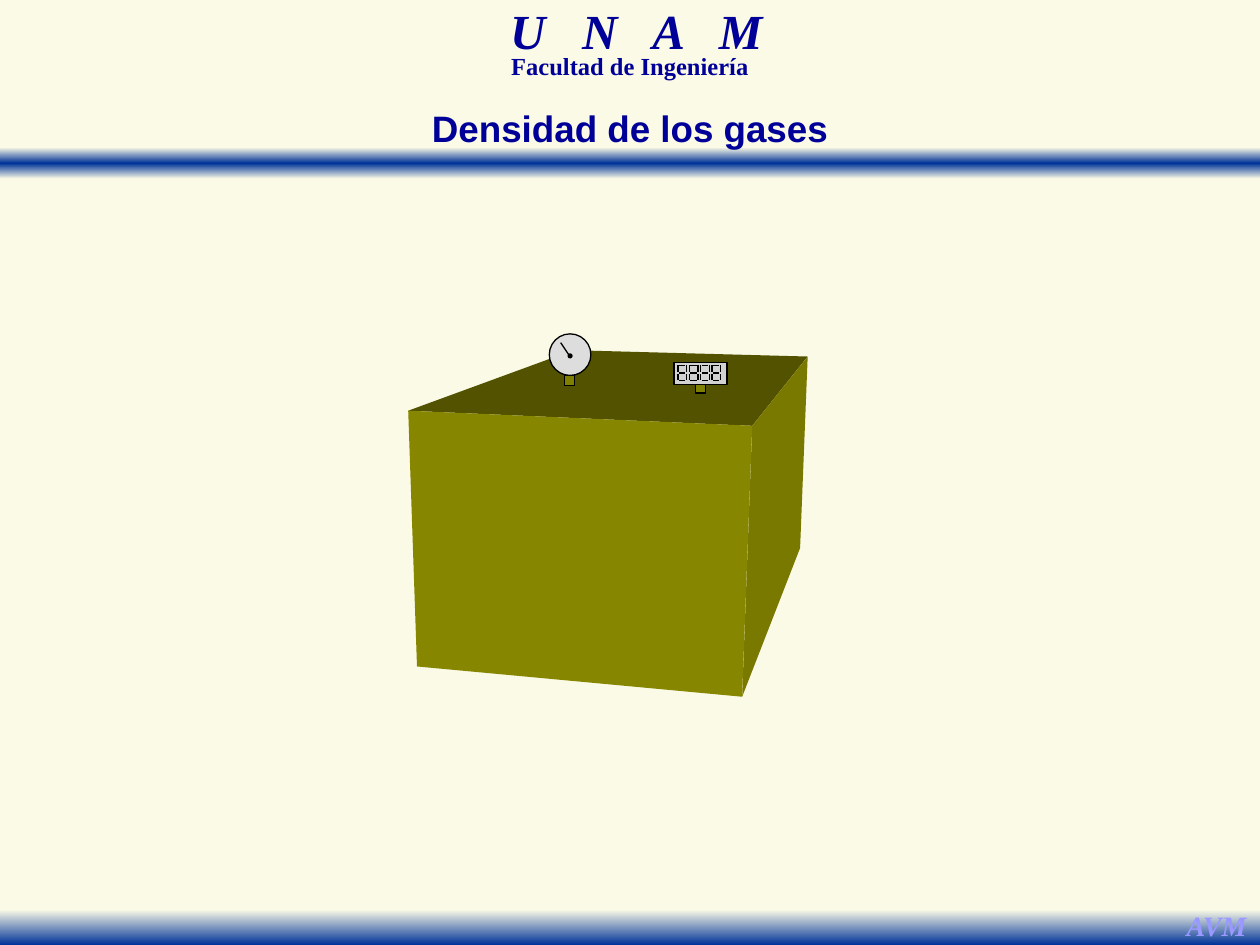
from lxml.etree import SubElement
from pptx import Presentation
from pptx.dml.color import RGBColor
from pptx.enum.shapes import MSO_CONNECTOR as Line, MSO_SHAPE as Shape
from pptx.enum.text import MSO_ANCHOR as Anchor, PP_ALIGN as Align
from pptx.oxml.ns import qn
from pptx.util import Inches, Pt

CREAM = RGBColor(0xFA, 0xFA, 0xE6)
BLUE = RGBColor(0x00, 0x33, 0x99)
NAVY = RGBColor(0x00, 0x00, 0x99)
LILAC = RGBColor(0x99, 0x99, 0xFF)
BLACK = RGBColor(0x00, 0x00, 0x00)
OLIVE = RGBColor(0x80, 0x80, 0x00)
OLIVE_FRONT = RGBColor(0x86, 0x86, 0x00)
OLIVE_SIDE = RGBColor(0x79, 0x79, 0x00)
OLIVE_TOP = RGBColor(0x52, 0x52, 0x00)
DIAL_GRAY = RGBColor(0xDD, 0xDD, 0xDD)
SCREEN_GRAY = RGBColor(0xD2, 0xD2, 0xD2)

# Content: left, top, width, height in inches
BANDS = [
    ((0, 1.17, 10, 0.25), [(0, CREAM), (50, BLUE), (100, CREAM)]),
    ((0, 7.22, 10, 0.28), [(0, CREAM), (100, BLUE)]),
]
# text, place, line spacing, letter spacing in points, wrap, font
TEXTS = [
    ("U N A M", (3.09, 0.08, 3.92, 0.43), 0.7, 7, True,
     dict(name="Times New Roman", size=Pt(28), bold=True, italic=True, color=NAVY)),
    ("Facultad de Ingeniería", (3.21, 0.42, 3.58, 0.26), 0.7, 0, True,
     dict(name="Times New Roman", size=Pt(14), bold=True, color=NAVY)),
    ("AVM", (9.31, 7.16, 0.69, 0.37), 1, 0, False,
     dict(name="Times New Roman", size=Pt(16), bold=True, italic=True, color=LILAC)),
    ("Densidad de los gases", (3.31, 0.79, 3.38, 0.45), 1, 0, False,
     dict(name="Arial", size=Pt(21), bold=True, color=NAVY)),
]

# Tank corners, seen in perspective
FRONT_TOP_LEFT, FRONT_TOP_RIGHT = (3.24, 3.26), (5.97, 3.38)
FRONT_LOW_LEFT, FRONT_LOW_RIGHT = (3.31, 5.29), (5.89, 5.53)
BACK_TOP_LEFT, BACK_TOP_RIGHT = (4.55, 2.78), (6.41, 2.83)
BACK_LOW_RIGHT = (6.35, 4.35)
TANK_FACES = [
    (OLIVE_TOP, [FRONT_TOP_LEFT, BACK_TOP_LEFT, BACK_TOP_RIGHT, FRONT_TOP_RIGHT]),
    (OLIVE_SIDE, [FRONT_TOP_RIGHT, BACK_TOP_RIGHT, BACK_LOW_RIGHT, FRONT_LOW_RIGHT]),
    (OLIVE_FRONT, [FRONT_TOP_LEFT, FRONT_TOP_RIGHT, FRONT_LOW_RIGHT, FRONT_LOW_LEFT]),
]

GAUGE_BODY = [
    (Shape.RECTANGLE, (4.48, 2.98, 0.08, 0.08), OLIVE),
    (Shape.OVAL, (4.36, 2.65, 0.33, 0.33), DIAL_GRAY),
]
NEEDLE = (4.53, 2.84, 4.45, 2.72)
PIVOT = (Shape.OVAL, (4.51, 2.81, 0.03, 0.03), BLACK)
THERMOMETER_BODY = [
    (Shape.RECTANGLE, (5.52, 3.04, 0.08, 0.08), OLIVE),
    (Shape.RECTANGLE, (5.35, 2.88, 0.42, 0.17), SCREEN_GRAY),
]
# Seven segments of one digit, measured from its top left corner
SEGMENTS = [(x, y, x, y + 0.05) for x in (0, 0.07) for y in (0, 0.07)]
SEGMENTS += [(0.01, y, 0.06, y) for y in (0, 0.06, 0.12)]
DIGIT_COUNT, DIGIT_LEFT, DIGIT_TOP, DIGIT_STEP = 4, 5.38, 2.9, 0.09


def inches(values):
    return [Inches(value) for value in values]


def add_part(shapes, kind, place, color, outlined=True):
    part = shapes.add_shape(kind, *inches(place))
    part.shadow.inherit = False
    part.fill.solid()
    part.fill.fore_color.rgb = color
    if outlined:
        part.line.color.rgb = BLACK
        part.line.width = Pt(0.75)
    else:
        part.line.fill.background()
    return part


def add_band(shapes, place, stops):
    band = add_part(shapes, Shape.RECTANGLE, place, CREAM, outlined=False)
    band.fill.gradient()
    gradient = band.element.spPr.find(qn("a:gradFill"))
    for child in list(gradient):
        gradient.remove(child)
    stop_list = SubElement(gradient, qn("a:gsLst"))
    for percent, color in stops:
        stop = SubElement(stop_list, qn("a:gs"), pos=str(percent * 1000))
        SubElement(stop, qn("a:srgbClr"), val=str(color))
    SubElement(gradient, qn("a:lin"), ang="5400000", scaled="0")


def add_text(shapes, text, place, line_spacing, letter_spacing, wrap, font):
    frame = shapes.add_textbox(*inches(place)).text_frame
    frame.word_wrap = wrap
    frame.vertical_anchor = Anchor.TOP
    paragraph = frame.paragraphs[0]
    paragraph.alignment = Align.CENTER
    paragraph.line_spacing = line_spacing
    run = paragraph.add_run()
    run.text = text
    for key, value in font.items():
        if key == "color":
            run.font.color.rgb = value
        else:
            setattr(run.font, key, value)
    if letter_spacing:
        run.font._element.set("spc", str(letter_spacing * 100))


def add_line(shapes, ends):
    line = shapes.add_connector(Line.STRAIGHT, *inches(ends))
    line.line.color.rgb = BLACK
    line.line.width = Pt(0.75)
    SubElement(line.element.spPr, qn("a:effectLst"))


def add_face(shapes, color, corners):
    points = [inches(corner) for corner in corners]
    builder = shapes.build_freeform(*points[0])
    builder.add_line_segments(points[1:], close=True)
    face = builder.convert_to_shape()
    face.shadow.inherit = False
    face.fill.solid()
    face.fill.fore_color.rgb = color
    face.line.fill.background()


def main():
    deck = Presentation()
    deck.slide_width, deck.slide_height = Inches(10), Inches(7.5)
    slide = deck.slides.add_slide(deck.slide_layouts[6])
    slide.background.fill.solid()
    slide.background.fill.fore_color.rgb = CREAM

    # Bands and headings
    for band in BANDS:
        add_band(slide.shapes, *band)
    for text in TEXTS:
        add_text(slide.shapes, *text)

    # Tank
    tank = slide.shapes.add_group_shape().shapes
    for face in TANK_FACES:
        add_face(tank, *face)

    # Pressure gauge
    for part in GAUGE_BODY:
        add_part(tank, *part)
    add_line(tank, NEEDLE)
    add_part(tank, *PIVOT)

    # Digital thermometer
    for part in THERMOMETER_BODY:
        add_part(tank, *part)
    for digit in range(DIGIT_COUNT):
        left = DIGIT_LEFT + digit * DIGIT_STEP
        for x1, y1, x2, y2 in SEGMENTS:
            add_line(tank, (left + x1, DIGIT_TOP + y1, left + x2, DIGIT_TOP + y2))

    deck.save("out.pptx")


if __name__ == "__main__":
    main()
